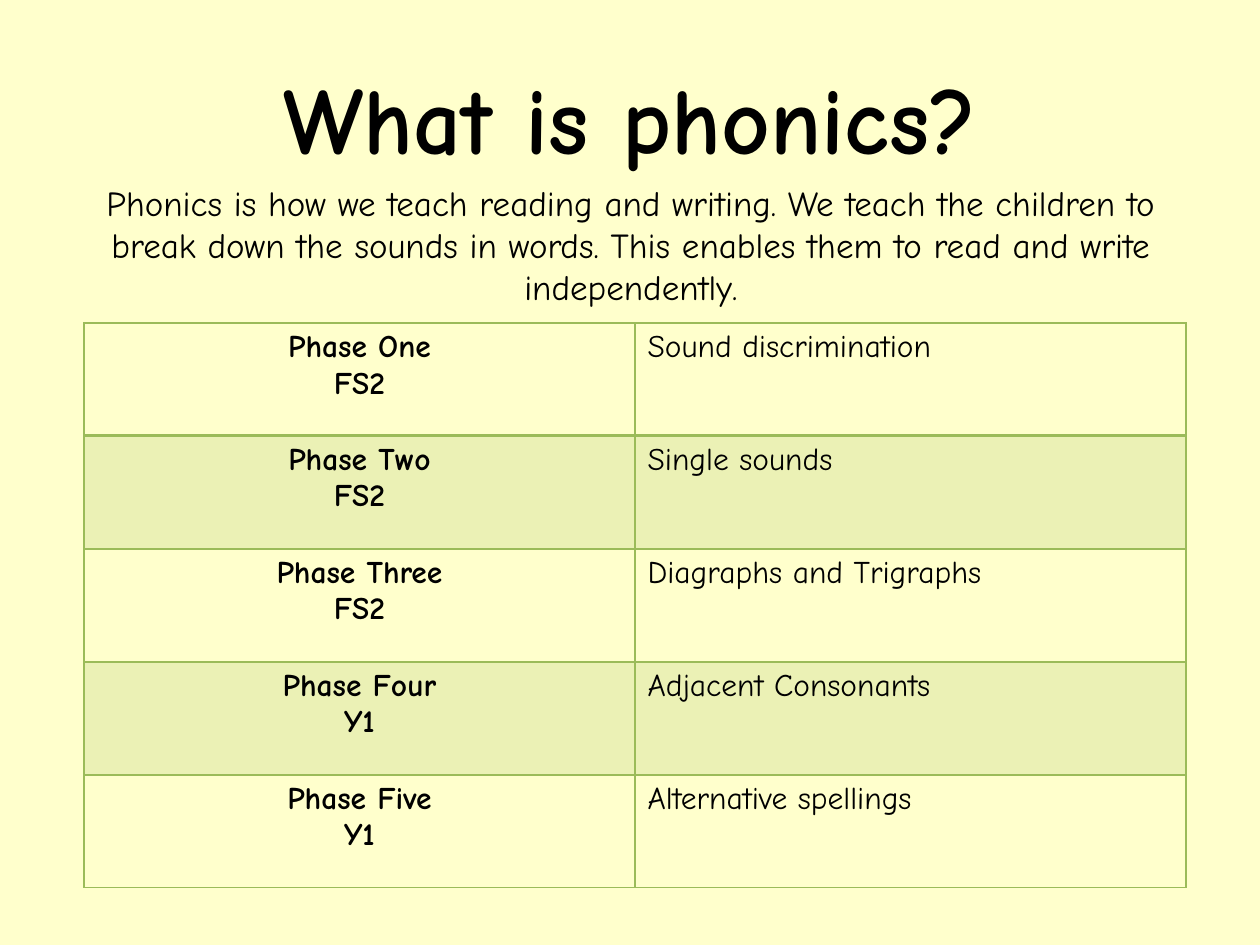
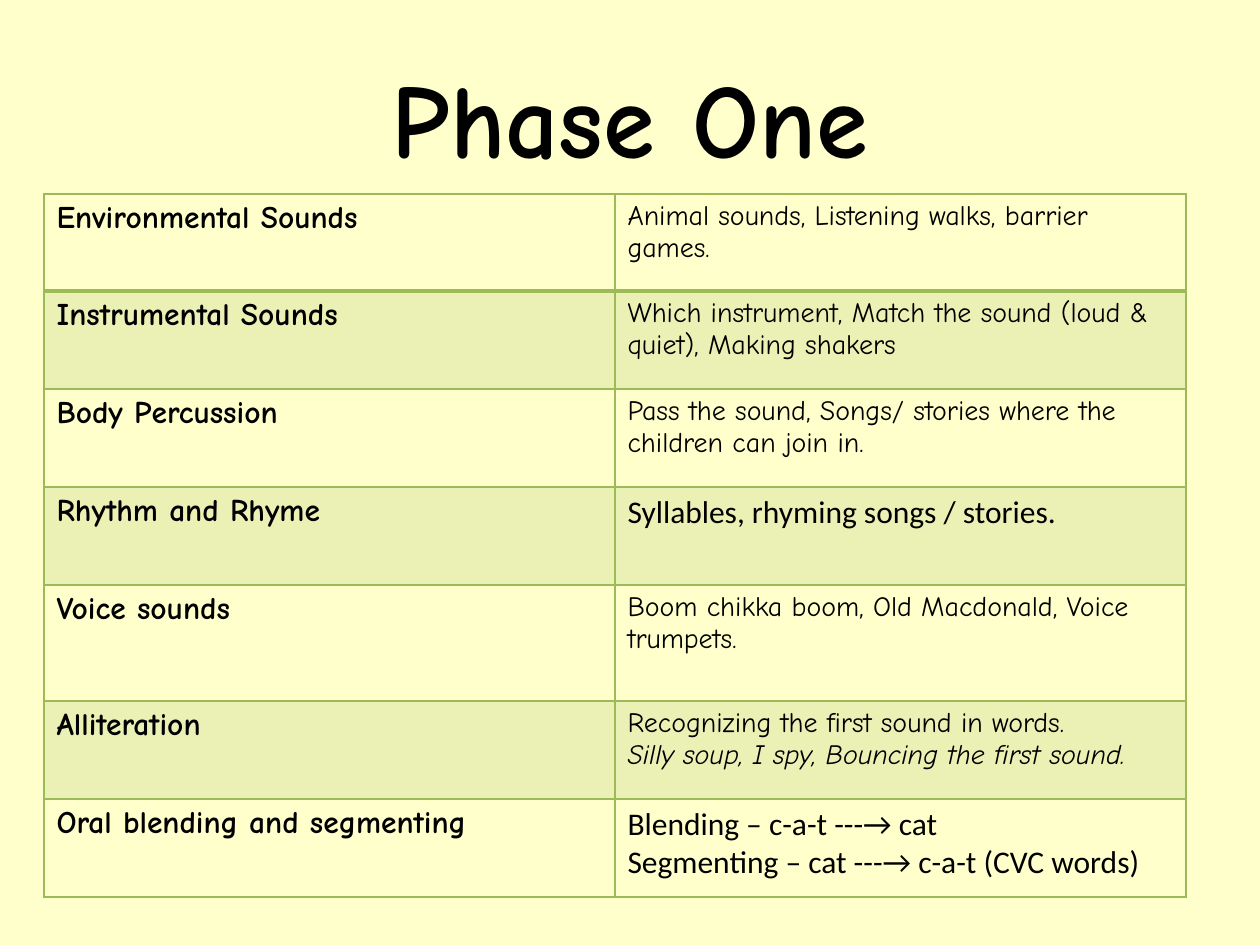
import dataclasses

import lxml.etree
import pptx
import pptx.dml.color
import pptx.enum.text
import pptx.oxml.ns
import pptx.util

EMU_PER_PX = 914400 / 126
SLIDE_SIZE = (1260, 945)
TITLE_BOX = (63, 38, 1134, 158)
INTRO_BOX = (64, 175, 1134, 624)

CREAM, GREEN, BLACK = "FFFFCC", "9BBB59", "000000"
BAND_ALPHA = 20
HAND_FONT, PLAIN_FONT = "Comic Neue", "Calibri"
LEFT = pptx.enum.text.PP_ALIGN.LEFT
CENTER = pptx.enum.text.PP_ALIGN.CENTER


@dataclasses.dataclass(frozen=True)
class Line:
    text: str
    size: int = 18
    font: str = HAND_FONT
    bold: bool = False
    italic: bool = False
    align: int = LEFT


@dataclasses.dataclass(frozen=True)
class Row:
    label: list[Line]
    detail: list[Line]
    height: int


@dataclasses.dataclass(frozen=True)
class Grid:
    left: int
    top: int
    column_width: int
    rows: list[Row]


def phase_row(phase: str, year: str, detail: str) -> Row:
    label = [Line(text, bold=True, align=CENTER) for text in (phase, year)]
    return Row(label, [Line(detail)], 113)


def sound_row(sound: str, *detail: Line, height: int = 98) -> Row:
    return Row([Line(sound, bold=True)], list(detail), height)


PHASES = Grid(84, 323, 551, [
    phase_row("Phase One", "FS2", "Sound discrimination"),
    phase_row("Phase Two", "FS2", "Single sounds"),
    phase_row("Phase Three", "FS2", "Diagraphs and Trigraphs"),
    phase_row("Phase Four", "Y1", "Adjacent Consonants"),
    phase_row("Phase Five", "Y1", "Alternative spellings"),
])

SOUNDS = Grid(44, 194, 571, [
    sound_row("Environmental Sounds",
              Line("Animal sounds, Listening walks, barrier games.", 16), height=97),
    sound_row("Instrumental Sounds",
              Line("Which instrument, Match the sound (loud & quiet), Making shakers", 16)),
    sound_row("Body Percussion",
              Line("Pass the sound, Songs/ stories where the children can join in.", 16)),
    sound_row("Rhythm and Rhyme",
              Line("Syllables, rhyming songs / stories.", font=PLAIN_FONT)),
    sound_row("Voice sounds",
              Line("Boom chikka boom, Old Macdonald, Voice trumpets.", 16), height=116),
    sound_row("Alliteration",
              Line("Recognizing the first sound in words.", 16),
              Line("Silly soup, I spy, Bouncing the first sound.", 16, italic=True)),
    sound_row("Oral blending and segmenting",
              Line("Blending – c-a-t ---→ cat", font=PLAIN_FONT),
              Line("Segmenting – cat ---→ c-a-t (CVC words)", font=PLAIN_FONT)),
])


def px(length: int) -> pptx.util.Emu:
    return pptx.util.Emu(round(length * EMU_PER_PX))


def rgb(color: str) -> pptx.dml.color.RGBColor:
    return pptx.dml.color.RGBColor.from_string(color)


def add_xml(parent, tag: str, **attributes):
    return lxml.etree.SubElement(parent, pptx.oxml.ns.qn(tag), attributes)


def place(shape, box: tuple[int, int, int, int]) -> None:
    shape.left, shape.top, shape.width, shape.height = map(px, box)


def write_lines(frame, lines: list[Line]) -> None:
    frame.text = "\n".join(line.text for line in lines)
    for paragraph, line in zip(frame.paragraphs, lines):
        paragraph.alignment = line.align
        font = paragraph.font
        font.name, font.size = line.font, pptx.util.Pt(line.size)
        font.bold, font.italic = line.bold, line.italic
        font.color.rgb = rgb(BLACK)


def write_title(slide, text: str, size: int) -> None:
    title = slide.shapes.title
    place(title, TITLE_BOX)
    write_lines(title.text_frame, [Line(text, size, bold=True, align=CENTER)])


def write_intro(slide, text: str) -> None:
    intro = slide.placeholders[1]
    place(intro, INTRO_BOX)
    write_lines(intro.text_frame, [Line(text, 20, align=CENTER)])
    paragraph = intro.text_frame.paragraphs[0]
    paragraph.space_before = pptx.util.Pt(4)
    font_properties = paragraph.font._element
    properties = font_properties.getparent()
    properties.set("marL", "0")
    properties.set("indent", "0")
    font_properties.addprevious(add_xml(properties, "a:buNone"))


def draw_borders(cell, row_index: int) -> None:
    """Rule all four sides, with a heavier rule under the first row."""
    widths = {"a:lnL": 1, "a:lnR": 1,
              "a:lnT": 2 if row_index == 1 else 1,
              "a:lnB": 2 if row_index == 0 else 1}
    properties = cell._tc.get_or_add_tcPr()
    for side, points in widths.items():
        rule = add_xml(properties, side, w=str(pptx.util.Pt(points)))
        add_xml(add_xml(rule, "a:solidFill"), "a:srgbClr", val=GREEN)


def fill_band(cell, banded: bool) -> None:
    if not banded:
        cell.fill.background()
        return
    cell.fill.solid()
    cell.fill.fore_color.rgb = rgb(GREEN)
    band = cell._tc.tcPr.find(pptx.oxml.ns.qn("a:solidFill"))
    add_xml(band[0], "a:alpha", val=str(BAND_ALPHA * 1000))


def draw_grid(slide, grid: Grid) -> None:
    height = sum(row.height for row in grid.rows)
    table = slide.shapes.add_table(
        len(grid.rows), 2, px(grid.left), px(grid.top),
        px(2 * grid.column_width), px(height)).table
    table.first_row = table.horz_banding = False
    for column in table.columns:
        column.width = px(grid.column_width)
    for index, row in enumerate(grid.rows):
        table.rows[index].height = px(row.height)
        for cell, lines in zip(table.rows[index].cells, (row.label, row.detail)):
            write_lines(cell.text_frame, lines)
            draw_borders(cell, index)
            fill_band(cell, banded=index % 2 == 1)


def main() -> None:
    deck = pptx.Presentation()
    deck.slide_width, deck.slide_height = map(px, SLIDE_SIZE)
    background = deck.slide_master.background.fill
    background.solid()
    background.fore_color.rgb = rgb(CREAM)
    title_and_body, title_only = deck.slide_layouts[1], deck.slide_layouts[5]

    overview = deck.slides.add_slide(title_and_body)
    write_title(overview, "What is phonics?", 54)
    write_intro(overview, "Phonics is how we teach reading and writing. We teach the "
                          "children to break down the sounds in words. This enables "
                          "them to read and write independently.")
    draw_grid(overview, PHASES)

    phase_one = deck.slides.add_slide(title_only)
    write_title(phase_one, "Phase One", 60)
    draw_grid(phase_one, SOUNDS)

    deck.save("out.pptx")


if __name__ == "__main__":
    main()
